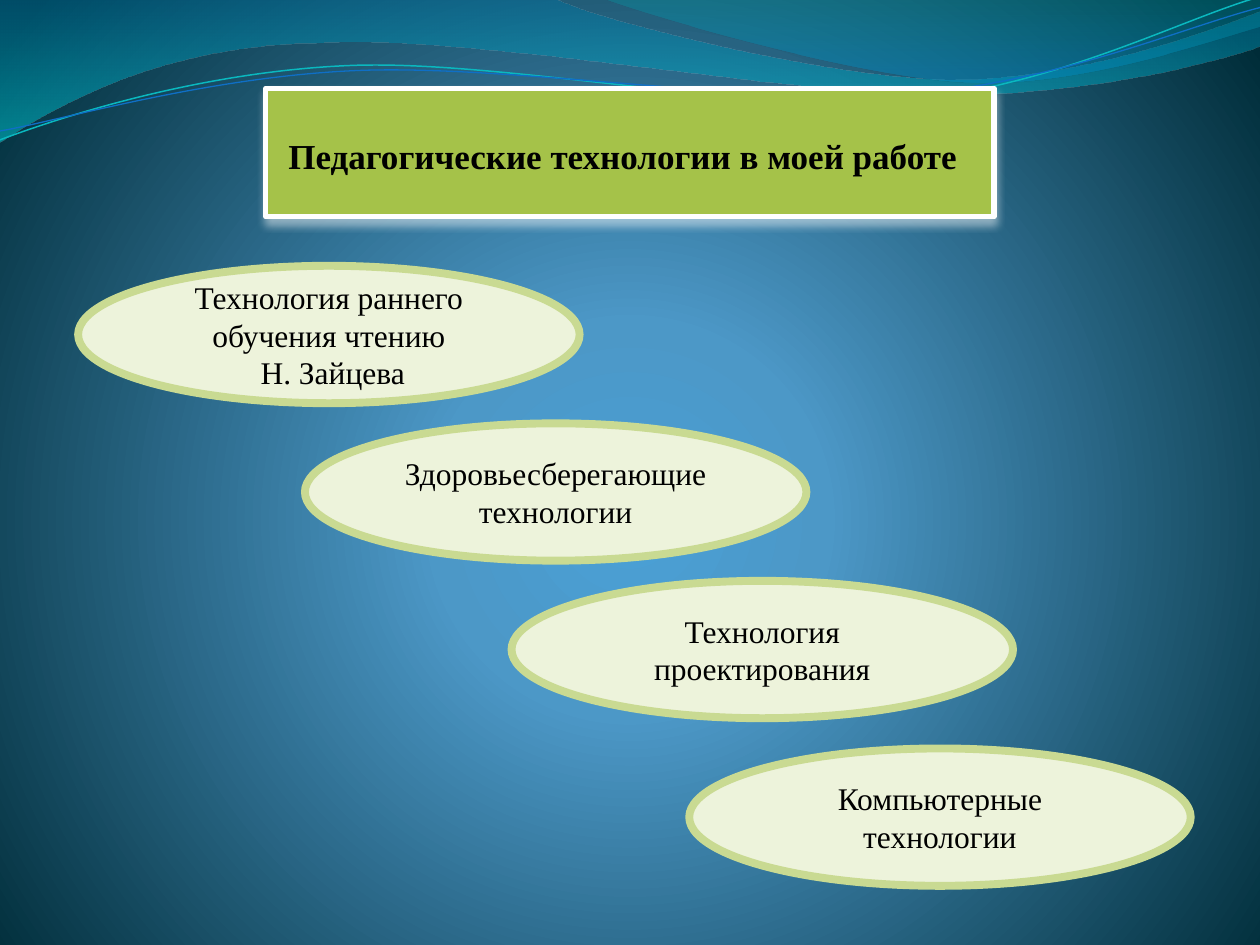
import math

from lxml import etree
from pptx import Presentation
from pptx.dml.color import RGBColor
from pptx.enum.shapes import MSO_SHAPE
from pptx.enum.text import MSO_ANCHOR, MSO_AUTO_SIZE, PP_ALIGN
from pptx.oxml import parse_xml
from pptx.oxml.ns import nsdecls, qn
from pptx.util import Inches, Pt

RECT, OVAL = MSO_SHAPE.RECTANGLE, MSO_SHAPE.OVAL
MIDDLE = MSO_ANCHOR.MIDDLE
LEFT, CENTER = PP_ALIGN.LEFT, PP_ALIGN.CENTER
FIT_SHAPE = MSO_AUTO_SIZE.SHAPE_TO_FIT_TEXT

DOWN = '<a:lin ang="5400000" scaled="0"/>'
RADIAL = ('<a:path path="circle">'
          '<a:fillToRect l="10000" t="110000" r="10000" b="100000"/></a:path>')
LINE_TILT = -2.7
LINE_CENTER = (4.99, 0.58)

# Waves: a start point, then (x, y) lines or six-number Bezier curves.
WIDE_WAVE = [(0, -0.01), (4.4, -0.01), (4.76, 0.17, 6.64, 0.63, 7.58, 0.63),
             (8.53, 0.63, 9.58, 0.26, 10, 0.09), (10.01, 0.36),
             (9.83, 0.44, 8.7, 0.76, 7.46, 0.75),
             (6.22, 0.75, 3.82, 0.28, 2.57, 0.34),
             (1.29, 0.35, 0.46, 0.83, -0.01, 1.13), (0, -0.01)]
RIGHT_WAVE = [(4.79, -0.01), (5.09, 0.11, 6.82, 0.62, 7.69, 0.65),
              (8.56, 0.69, 9.61, 0.32, 10, 0.21), (10, 0), (4.79, -0.01)]
TEAL_LINE = [(0, 1.11), (0.48, 0.93, 1.58, 0.57, 2.77, 0.52),
             (3.95, 0.47, 5.93, 0.89, 7.13, 0.8),
             (8.33, 0.71, 9.38, 0.15, 9.98, -0.02)]
BLUE_LINE = [(0, 1.04), (0.47, 0.96, 1.64, 0.61, 2.83, 0.56),
             (4.03, 0.51, 5.97, 0.83, 7.17, 0.75),
             (8.36, 0.67, 9.41, 0.21, 10, 0.06)]

TECHNOLOGIES = [
    (0.62, 2.11, ["Технология раннего обучения чтению", " Н. Зайцева"]),
    (4.06, 4.61, ["Технология проектирования"]),
    (5.47, 5.94, ["Компьютерные технологии"]),
    (2.42, 3.36, ["Здоровьесберегающие технологии"]),
]


def rgb(value):
    return RGBColor.from_string(value)


def set_gradient(fill, parent, stops, direction):
    """Fill with (percent, colour, opacity) stops; parent holds the fill element."""
    fill.solid()
    fill.fore_color.rgb = rgb("FFFFFF")
    gs = "".join(
        f'<a:gs pos="{pos * 1000}"><a:srgbClr val="{color}">'
        f'<a:alpha val="{alpha * 1000}"/></a:srgbClr></a:gs>'
        for pos, color, alpha in stops)
    grad = parse_xml(f'<a:gradFill {nsdecls("a")} rotWithShape="1">'
                     f'<a:gsLst>{gs}</a:gsLst>{direction}</a:gradFill>')
    parent.replace(parent.find(qn("a:solidFill")), grad)


def set_line(sp, color, width):
    sp.line.color.rgb = rgb(color)
    sp.line.width = Pt(width)


def add_shadow(sp, color, opacity, blur, distance):
    """Give the shape a soft shadow straight below it."""
    effects = sp._element.spPr.find(qn("a:effectLst"))
    shadow = etree.SubElement(effects, qn("a:outerShdw"), blurRad=str(Pt(blur)),
                              dist=str(Pt(distance)), dir="5400000",
                              rotWithShape="0")
    clr = etree.SubElement(shadow, qn("a:srgbClr"), val=color)
    etree.SubElement(clr, qn("a:alpha"), val=str(opacity * 1000))


def turn_back(point):
    """Undo the tilt of the wave lines for one point."""
    angle = math.radians(-LINE_TILT)
    dx, dy = point[0] - LINE_CENTER[0], point[1] - LINE_CENTER[1]
    return (LINE_CENTER[0] + dx * math.cos(angle) - dy * math.sin(angle),
            LINE_CENTER[1] + dx * math.sin(angle) + dy * math.cos(angle))


def add_path(s, outline, close, tilt=0):
    """Draw the control points as a freeform, then join them into curves."""
    points = [seg[i:i + 2] for seg in outline for i in range(0, len(seg), 2)]
    if tilt:
        points = [turn_back(point) for point in points]
    points = [(Inches(x), Inches(y)) for x, y in points]
    builder = s.shapes.build_freeform(*points[0])
    builder.add_line_segments(points[1:], close=close)
    sp = builder.convert_to_shape()
    lines = iter(list(sp._element.iter(qn("a:lnTo"))))
    for seg in outline[1:]:
        first = next(lines)
        if len(seg) == 6:
            curve = etree.Element(qn("a:cubicBezTo"))
            first.getparent().replace(first, curve)
            curve.append(first[0])
            for _ in range(2):
                line = next(lines)
                curve.append(line[0])
                line.getparent().remove(line)
    sp.rotation = tilt
    sp.shadow.inherit = False
    return sp


def add_wave(s, outline, stops):
    sp = add_path(s, outline, True)
    set_gradient(sp.fill, sp._element.spPr, stops, DOWN)
    sp.line.fill.background()


def add_wave_line(s, outline, color, width):
    sp = add_path(s, outline, False, LINE_TILT)
    sp.fill.background()
    set_line(sp, color, width)


def add_box(s, kind, box, fill, line, width):
    sp = s.shapes.add_shape(kind, *map(Inches, box))
    sp.shadow.inherit = False
    sp.fill.solid()
    sp.fill.fore_color.rgb = rgb(fill)
    set_line(sp, line, width)
    return sp


def set_text(tf, lines, align, size, bold=False):
    font = {"name": "Times New Roman", "size": Pt(size), "bold": bold}
    for i, line in enumerate(lines):
        p = tf.add_paragraph() if i else tf.paragraphs[0]
        p.alignment = align
        r = p.add_run()
        r.text = line
        for key, value in font.items():
            setattr(r.font, key, value)
        r.font.color.rgb = rgb("000000")


def add_title(s):
    sp = add_box(s, RECT, (2.11, 0.7, 5.78, 1.02), "A5C249", "FFFFFF", 3)
    add_shadow(sp, "FFFFFF", 48, 4.5, 3)
    tf = s.shapes.add_textbox(*map(Inches, (2.19, 1.02, 5.55, 0.44))).text_frame
    tf.word_wrap = False
    tf.auto_size = FIT_SHAPE
    set_text(tf, ["Педагогические технологии в моей работе"], LEFT, 20, True)


def add_technology(s, left, top, lines):
    sp = add_box(s, OVAL, (left, top, 3.98, 1.09), "EDF3DB", "C9DA92", 4.5)
    tf = sp.text_frame
    tf.word_wrap = True
    tf.vertical_anchor = MIDDLE
    set_text(tf, lines, CENTER, 18)


def main():
    prs = Presentation()
    prs.slide_width, prs.slide_height = Inches(10), Inches(7.5)
    s = prs.slides.add_slide(prs.slide_layouts[6])

    fill = s.background.fill
    set_gradient(fill, s._element.find(".//" + qn("p:bgPr")),
                 [(0, "4AA0D6", 100), (25, "4C98C7", 100), (100, "002C38", 100)],
                 RADIAL)
    add_wave(s, WIDE_WAVE, [(0, "0074A1", 45), (100, "00C6CF", 55)])
    add_wave(s, RIGHT_WAVE, [(0, "00A1A9", 30), (80, "008BBF", 45)])
    add_wave_line(s, TEAL_LINE, "0AB8BF", 0.85)
    add_wave_line(s, BLUE_LINE, "0F6FC6", 0.75)

    add_title(s)
    for left, top, lines in TECHNOLOGIES:
        add_technology(s, left, top, lines)
    prs.save("out.pptx")


if __name__ == "__main__":
    main()
